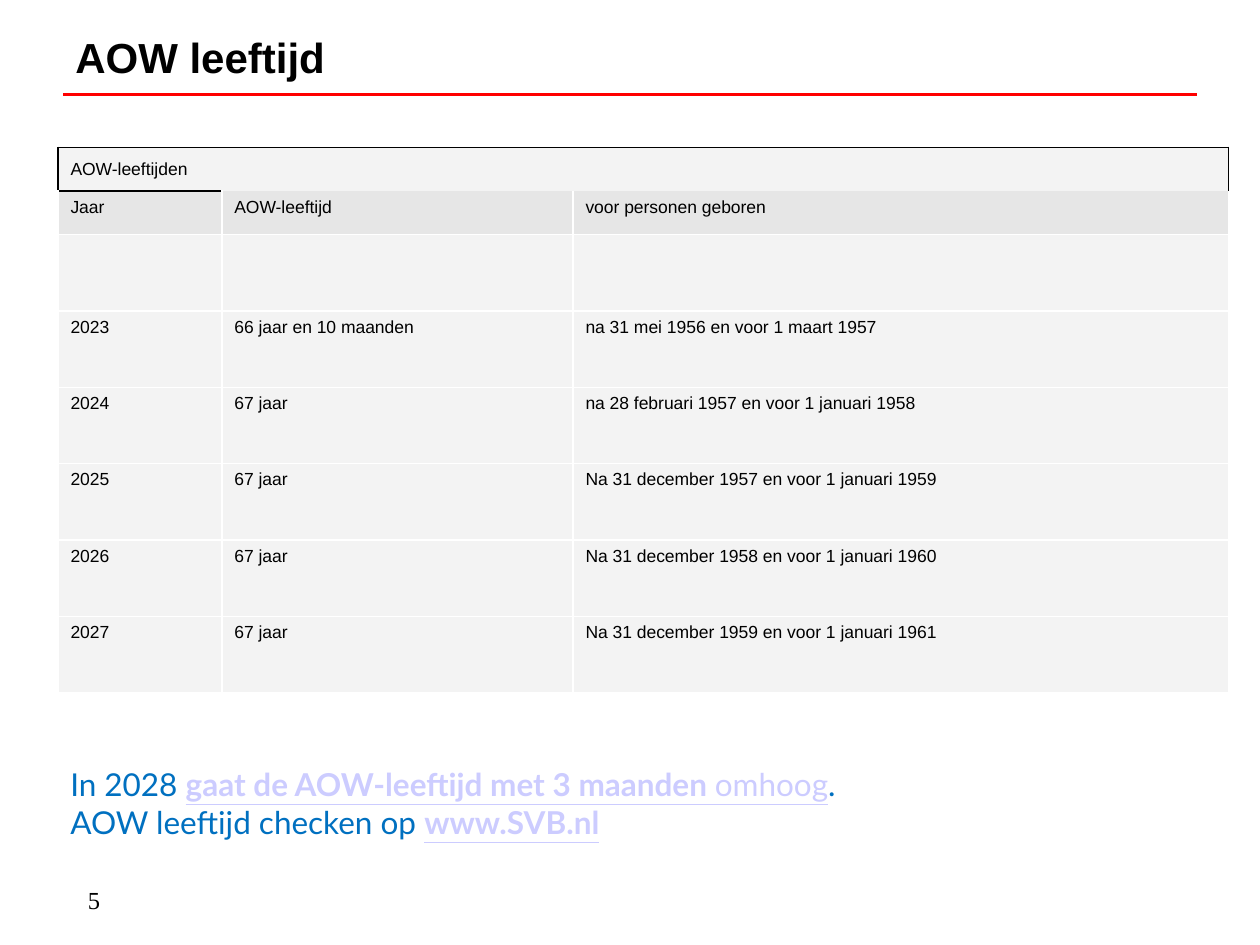
"""Builds the slide with the AOW pension ages per year."""
from lxml import etree
from pptx import Presentation, util as u
from pptx.dml.color import RGBColor
from pptx.enum import shapes, text
from pptx.oxml.ns import qn

THEME = {
    "ink": "000000", "rule": "FF0000", "grid": "FFFFFF", "note": "0070C0", "accent": "CCCCFF",
    "row": "F3F3F3", "head": "E6E6E6",
    "title": 24, "cell": 10, "body": 18, "number": 14,
}
AGES = [
    ("AOW-leeftijden", "", ""),
    ("Jaar", "AOW-leeftijd", "voor personen geboren"),
    ("", "", ""),
    ("2023", "66 jaar en 10 maanden", "na 31 mei 1956 en voor 1 maart 1957"),
    ("2024", "67 jaar", "na 28 februari 1957 en voor 1 januari 1958"),
    ("2025", "67 jaar", "Na 31 december 1957 en voor 1 januari 1959"),
    ("2026", "67 jaar", "Na 31 december 1958 en voor 1 januari 1960"),
    ("2027", "67 jaar", "Na 31 december 1959 en voor 1 januari 1961"),
]
PLAIN = {"name": "Lato", "size": u.Pt(THEME["body"]), "color": THEME["note"]}
LINKED = PLAIN | {"color": THEME["accent"], "underline": True}
STRONG = LINKED | {"bold": True}
NOTE = [
    [("In 2028\u00a0".replace("\u00a0", " "), PLAIN),
     ("gaat de AOW-leeftijd met 3 maanden ", STRONG), ("omhoog", LINKED), (".", PLAIN)],
    [("AOW leeftijd checken op ", PLAIN), ("www.SVB.nl", STRONG)],
]


def write(frame, paragraphs):
    for index, runs in enumerate(paragraphs):
        line = frame.add_paragraph() if index else frame.paragraphs[0]
        for words, style in runs:
            run = line.add_run()
            run.text = words
            for key, value in style.items():
                if key == "color":
                    run.font.color.rgb = RGBColor.from_string(value)
                else:
                    setattr(run.font, key, value)


def edge(cell, side, color):
    line = etree.SubElement(cell._tc.get_or_add_tcPr(), qn(f"a:ln{side}"), w=str(u.Pt(1)))
    if color:
        fill = etree.SubElement(line, qn("a:solidFill"))
        etree.SubElement(fill, qn("a:srgbClr"), val=color)
    else:
        etree.SubElement(line, qn("a:noFill"))


deck = Presentation()
deck.slide_width, deck.slide_height = u.Inches(10), u.Inches(7.5)
wide, high = deck.slide_width, deck.slide_height
slide = deck.slides.add_slide(deck.slide_layouts[6])

rule = slide.shapes.add_connector(
    shapes.MSO_CONNECTOR.STRAIGHT, int(wide * 0.05), int(high * 0.1), int(wide * 0.95), int(high * 0.1))
rule.line.color.rgb = RGBColor.from_string(THEME["rule"])
rule.line.width = u.Pt(2)
etree.SubElement(rule._element.spPr, qn("a:effectLst"))

title_style = {"name": "Arial", "size": u.Pt(THEME["title"]), "color": THEME["ink"], "bold": True}
number_style = {"name": "Times New Roman", "size": u.Pt(THEME["number"]), "color": THEME["ink"]}
for left, top, width, height, anchor, paragraphs in [
    (0.05, 0, 0.72, 0.12, text.MSO_ANCHOR.MIDDLE, [[("AOW leeftijd", title_style)]]),
    (0.06, 0.93, 0.21, 0.04, text.MSO_ANCHOR.TOP, [[("5", number_style)]]),
    (0.046, 0.803, 0.9, 0.13, text.MSO_ANCHOR.TOP, NOTE),
]:
    frame = slide.shapes.add_textbox(
        int(wide * left), int(high * top), int(wide * width), int(high * height)).text_frame
    frame.word_wrap = True
    frame.vertical_anchor = anchor
    write(frame, paragraphs)

table_width, table_height = u.Inches(9.29), u.Inches(4.33)
ages = slide.shapes.add_table(
    len(AGES), 3, u.Inches(0.46), u.Inches(1.17), table_width, table_height).table
ages.first_row = ages.horz_banding = False
for column, share in zip(ages.columns, (0.14, 0.3, 0.56)):
    column.width = int(table_width * share)
for row, share in zip(ages.rows, [0.08] * 2 + [0.14] * 6):
    row.height = int(table_height * share)
ages.cell(0, 0).merge(ages.cell(0, 2))

cell_style = {"name": "Arial", "size": u.Pt(THEME["cell"]), "color": THEME["ink"]}
for r, values in enumerate(AGES):
    for c, value in enumerate(values):
        cell = ages.cell(r, c)
        if r == 0:
            cell.vertical_anchor = text.MSO_ANCHOR.MIDDLE
            edges = {"L": THEME["ink"], "R": THEME["ink"], "T": THEME["ink"],
                     "B": None if c else THEME["ink"]}
        else:
            edges = dict.fromkeys("LRTB", THEME["grid"])
            if r == 1:
                edges["T"] = None if c else THEME["ink"]
        for side, color in edges.items():
            edge(cell, side, color)
        cell.fill.solid()
        cell.fill.fore_color.rgb = RGBColor.from_string(THEME["head" if r == 1 else "row"])
        if value:
            write(cell.text_frame, [[(value, cell_style)]])

deck.save("out.pptx")
